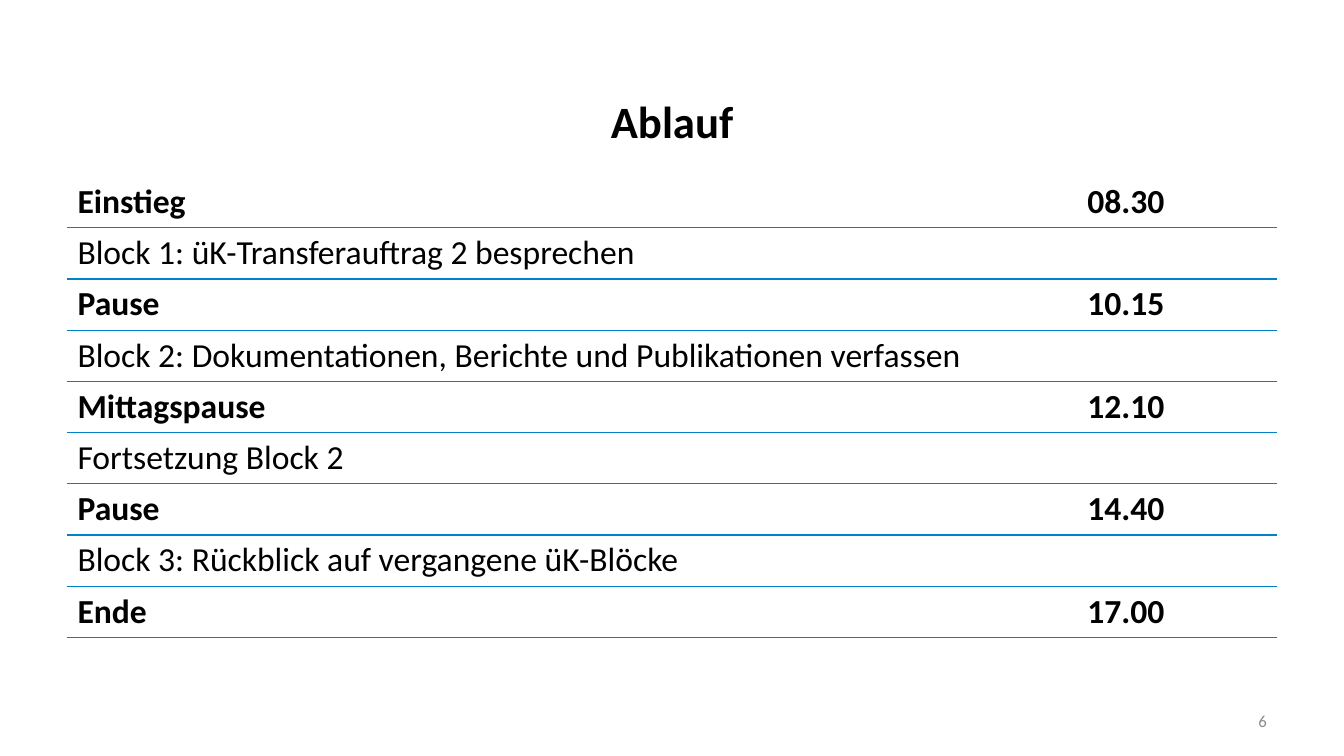
from lxml.etree import SubElement
from pptx import Presentation
from pptx.dml.color import RGBColor
from pptx.enum.text import MSO_ANCHOR as Anchor, PP_ALIGN as Align
from pptx.oxml.ns import qn
from pptx.util import Cm, Pt

AGENDA = [
    ("Einstieg", "08.30"),
    ("Block 1: üK-Transferauftrag 2 besprechen", ""),
    ("Pause", "10.15"),
    ("Block 2: Dokumentationen, Berichte und Publikationen verfassen", ""),
    ("Mittagspause", "12.10"),
    ("Fortsetzung Block 2", ""),
    ("Pause", "14.40"),
    ("Block 3: Rückblick auf vergangene üK-Blöcke", ""),
    ("Ende", "17.00"),
]


def colour(value):
    """Turn a hex string into a colour."""
    return RGBColor.from_string(value)


class AgendaPage:
    """Hold the style and the slide on which the agenda is laid out."""

    FONT = "Calibri"
    INK = "000000"
    MUTED = "8C8C8C"
    RULE = "0082CA"
    PLAIN_TABLE = "{2D5ABB26-0587-4C30-8999-92F81FD0307C}"
    LEFT, WIDTH = 1.7, 30.48

    def __init__(self, deck):
        """Add a page with a title placeholder."""
        self.page = deck.slides.add_slide(deck.slide_layouts[5])

    def add_text(self, frame, text, size, ink=INK, bold=False, align=Align.LEFT):
        """Add one formatted run to a text frame."""
        para = frame.paragraphs[0]
        para.alignment = align
        span = para.add_run()
        span.text = text
        span.font.name = self.FONT
        span.font.size = Pt(size)
        span.font.bold = bold
        span.font.color.rgb = colour(ink)

    def title(self, text):
        """Place and fill the title."""
        box = self.page.shapes.title
        box.left, box.top = Cm(self.LEFT), Cm(2.13)
        box.width, box.height = Cm(self.WIDTH), Cm(1.8)
        box.text_frame.vertical_anchor = Anchor.MIDDLE
        self.add_text(box.text_frame, text, 32, bold=True, align=Align.CENTER)

    def underline(self, cell):
        """Draw the bottom border of a cell."""
        border = SubElement(cell._tc.get_or_add_tcPr(), qn("a:lnB"), w=str(Pt(1)))
        fill = SubElement(border, qn("a:solidFill"))
        SubElement(fill, qn("a:srgbClr"), val=self.RULE)

    def schedule(self, entries, row_height=1.29, time_width=5.03):
        """Add the ruled table, with timed entries in bold."""
        frame = self.page.shapes.add_table(
            len(entries), 2, Cm(self.LEFT), Cm(4.45),
            Cm(self.WIDTH), Cm(row_height * len(entries)))
        table = frame.table
        table._tbl.tblPr.find(qn("a:tableStyleId")).text = self.PLAIN_TABLE
        table.first_row = table.horz_banding = False
        table.columns[0].width = Cm(self.WIDTH - time_width)
        table.columns[1].width = Cm(time_width)
        for row, entry in zip(table.rows, entries):
            for cell, text in zip(row.cells, entry):
                self.underline(cell)
                cell.fill.background()
                if text:
                    self.add_text(cell.text_frame, text, 24, bold=bool(entry[1]))

    def number(self, text):
        """Add the page number at the lower right."""
        box = self.page.shapes.add_textbox(Cm(24.28), Cm(17.65), Cm(7.9), Cm(1.02))
        box.text_frame.word_wrap = True
        box.text_frame.vertical_anchor = Anchor.MIDDLE
        self.add_text(box.text_frame, text, 12, self.MUTED, align=Align.RIGHT)


def main():
    """Build and save the deck."""
    deck = Presentation()
    deck.slide_width, deck.slide_height = Cm(33.87), Cm(19.05)
    agenda = AgendaPage(deck)
    agenda.schedule(AGENDA)
    agenda.title("Ablauf")
    agenda.number("6")
    deck.save("out.pptx")


if __name__ == "__main__":
    main()
